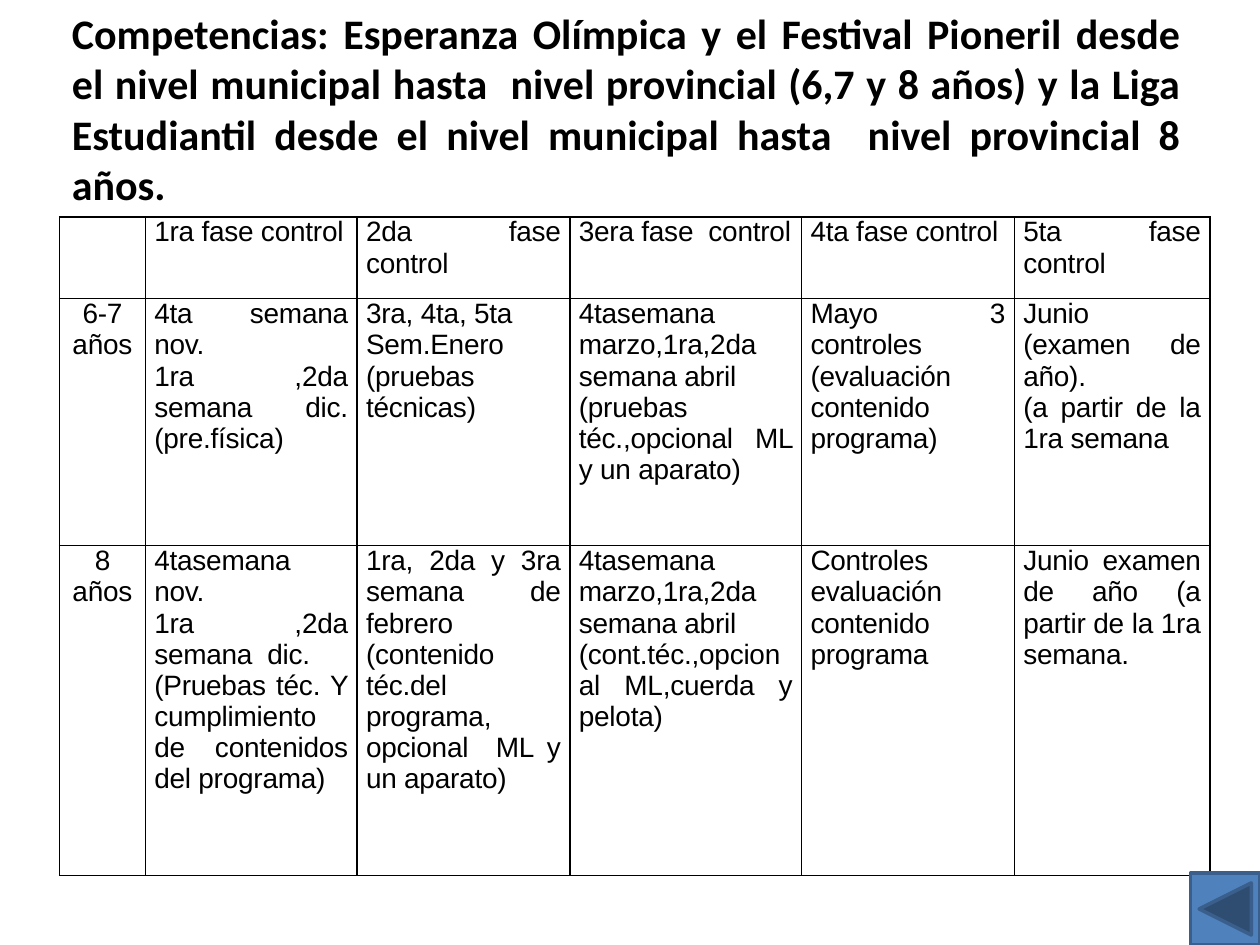
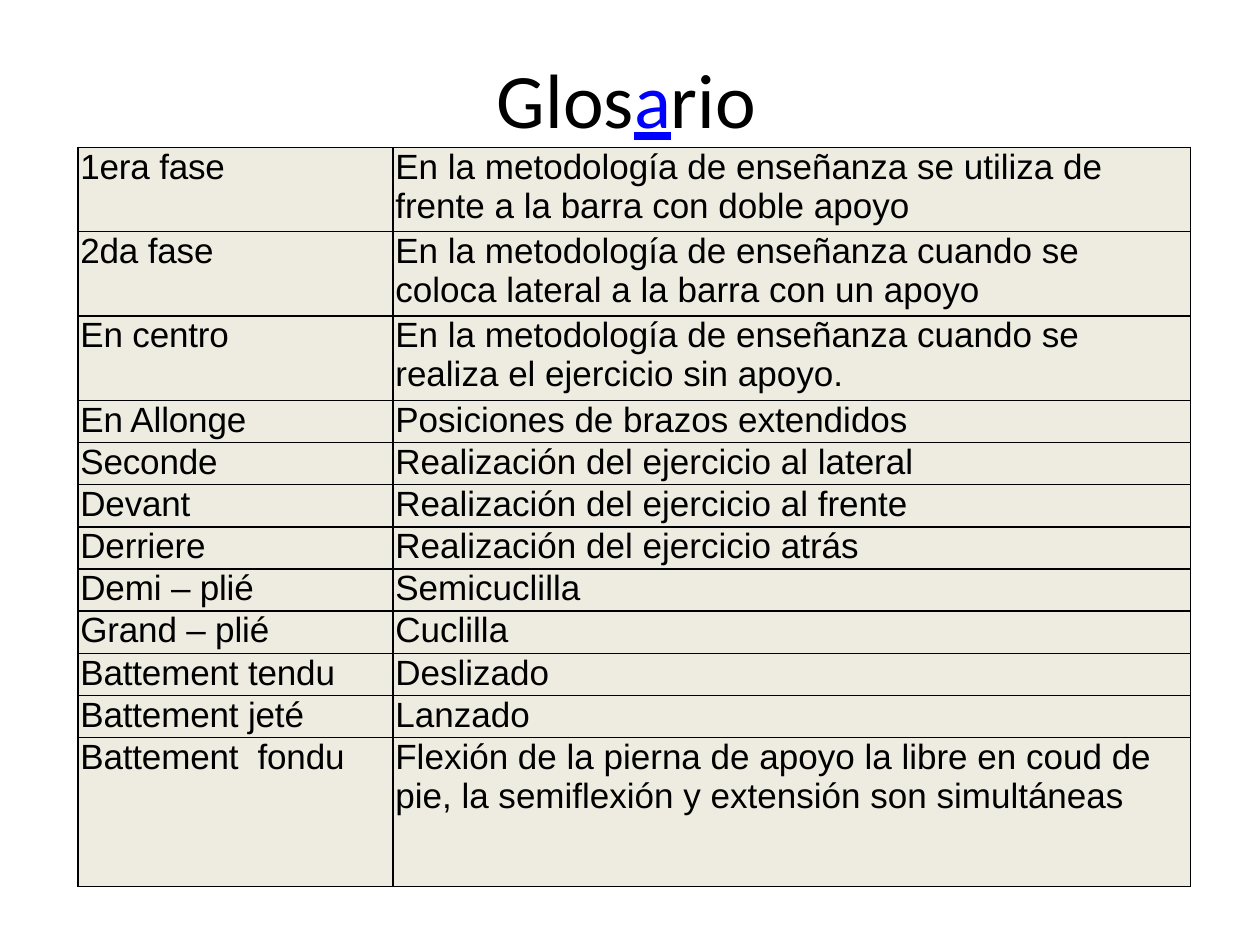
from pptx import Presentation
from pptx.dml.color import RGBColor
from pptx.enum.shapes import MSO_SHAPE as Shape
from pptx.enum.text import MSO_ANCHOR as Anchor, PP_ALIGN as Align
from pptx.oxml import parse_xml
from pptx.util import Cm, Pt

BLACK = RGBColor(0x00, 0x00, 0x00)
LINK = RGBColor(0x00, 0x00, 0xFF)
CREAM = RGBColor(0xEE, 0xEC, 0xE1)
BLUE = RGBColor(0x4F, 0x81, 0xBD)
NAVY = RGBColor(0x3A, 0x5F, 0x8C)
SPACE = "http://schemas.openxmlformats.org/drawingml/2006/main"

PHASES = [
    ["", "1ra fase control", "2da fase control", "3era fase  control",
     "4ta fase control", "5ta fase control"],
    ["6-7 años",
     "4ta semana nov.\n1ra ,2da semana dic.(pre.física)",
     "3ra, 4ta, 5ta \nSem.Enero\n(pruebas técnicas)",
     "4tasemana marzo,1ra,2da semana abril\n"
     "(pruebas téc.,opcional ML y un aparato)",
     "Mayo 3 controles (evaluación contenido programa)",
     "Junio (examen de año).\n(a partir de la 1ra semana"],
    ["8 años",
     "4tasemana nov.\n1ra ,2da semana  dic.\n"
     "(Pruebas téc. Y cumplimiento de contenidos del programa)",
     "1ra, 2da y 3ra semana de febrero (contenido téc.del programa, "
     "opcional  ML y un aparato)",
     "4tasemana marzo,1ra,2da semana abril\n"
     "(cont.téc.,opcional ML,cuerda y pelota)",
     "Controles evaluación contenido programa",
     "Junio examen de año (a partir de la 1ra semana."],
]

TERMS = [
    ["1era fase", "En la metodología de enseñanza se utiliza de frente a la "
     "barra con doble apoyo"],
    ["2da fase", "En la metodología de enseñanza cuando se coloca lateral a "
     "la barra con un apoyo"],
    ["En centro", "En la metodología de enseñanza cuando se realiza el "
     "ejercicio sin apoyo."],
    ["En Allonge", "Posiciones de brazos extendidos"],
    ["Seconde", "Realización del ejercicio al lateral"],
    ["Devant", "Realización del ejercicio al frente"],
    ["Derriere", "Realización del ejercicio atrás"],
    ["Demi – plié", "Semicuclilla"],
    ["Grand – plié", "Cuclilla"],
    ["Battement tendu", "Deslizado"],
    ["Battement jeté", "Lanzado"],
    ["Battement  fondu", "Flexión de la pierna de apoyo la libre en coud de "
     "pie, la semiflexión y extensión son simultáneas"],
]


class Deck:
    head = "Calibri"
    body = "Arial"

    def __init__(self):
        self.show = Presentation()
        self.show.slide_width, self.show.slide_height = Cm(25.4), Cm(19.05)
        self.slide = None

    def page(self):
        self.slide = self.show.slides.add_slide(self.show.slide_layouts[6])

    def style(self, run, face, size, color=BLACK, bold=False):
        run.font.name, run.font.size, run.font.bold = face, Pt(size), bold
        run.font.color.rgb = color

    def title(self, parts, top, high, size, align, bold=False):
        box = self.slide.shapes.add_textbox(Cm(1.2), Cm(top), Cm(22.86), Cm(high))
        frame = box.text_frame
        frame.word_wrap, frame.vertical_anchor = True, Anchor.MIDDLE
        para = frame.paragraphs[0]
        para.alignment = align
        for text, color in parts:
            run = para.add_run()
            run.text = text
            self.style(run, self.head, size, color, bold)
            run.font.underline = color == LINK

    def edge(self, cell):
        props = cell._tc.get_or_add_tcPr()
        for side in "LRTB":
            props.append(parse_xml(
                f'<a:ln{side} xmlns:a="{SPACE}" w="{Pt(1)}"><a:solidFill>'
                f'<a:srgbClr val="{BLACK}"/></a:solidFill></a:ln{side}>'))

    def cell(self, cell, text, size, align, pad, fill, tight):
        cell.margin_left = cell.margin_right = Cm(pad)
        cell.margin_top = cell.margin_bottom = 0
        self.edge(cell)
        if fill is None:
            cell.fill.background()
        else:
            cell.fill.solid()
            cell.fill.fore_color.rgb = fill
        cell.text_frame.text = text
        for para in cell.text_frame.paragraphs:
            para.alignment = align
            for run in para.runs:
                self.style(run, self.body, size)
                if tight:
                    run.font._element.set("spc", "-10")

    def table(self, data, left, top, wides, highs, size, aligns, pad,
              fill=None, loose=()):
        grid = self.slide.shapes.add_table(
            len(highs), len(wides), Cm(left), Cm(top),
            Cm(sum(wides)), Cm(sum(highs))).table
        grid.first_row = grid.horz_banding = False
        for col, wide in zip(grid.columns, wides):
            col.width = Cm(wide)
        for row, high, texts in zip(grid.rows, highs, data):
            row.height = Cm(high)
            for i, (cell, text) in enumerate(zip(row.cells, texts)):
                self.cell(cell, text, size, aligns[i], pad, fill, i not in loose)

    def back(self):
        key = self.slide.shapes.add_shape(
            Shape.ACTION_BUTTON_BACK_OR_PREVIOUS,
            Cm(24), Cm(17.6), Cm(1.4), Cm(1.45))
        key.shadow.inherit = False
        key.fill.solid()
        key.fill.fore_color.rgb = BLUE
        key.line.color.rgb, key.line.width = NAVY, Pt(2)


def main():
    deck = Deck()

    deck.page()
    deck.title([("Competencias: Esperanza Olímpica y el Festival Pioneril "
                 "desde el nivel municipal hasta  nivel provincial (6,7 y 8 "
                 "años) y la Liga Estudiantil desde el nivel municipal hasta  "
                 "nivel provincial 8 años.", BLACK)],
               0, 4.37, 24, Align.JUSTIFY, bold=True)
    deck.table(PHASES, 1.2, 4.37, [1.73, 4.27, 4.29, 4.67, 4.29, 3.94],
               [1.65, 4.98, 6.65], 16,
               [Align.CENTER] + [Align.JUSTIFY] * 5, 0.18)
    deck.back()

    deck.page()
    deck.title([("Glos", BLACK), ("a", LINK), ("rio", BLACK)],
               0.79, 2.36, 44, Align.CENTER)
    deck.table(TERMS, 1.57, 2.97, [6.35, 16.08],
               [1.7] * 3 + [0.85] * 8 + [3], 20, [Align.LEFT] * 2, 0.05,
               CREAM, loose=[1])

    deck.show.save("out.pptx")


if __name__ == "__main__":
    main()
